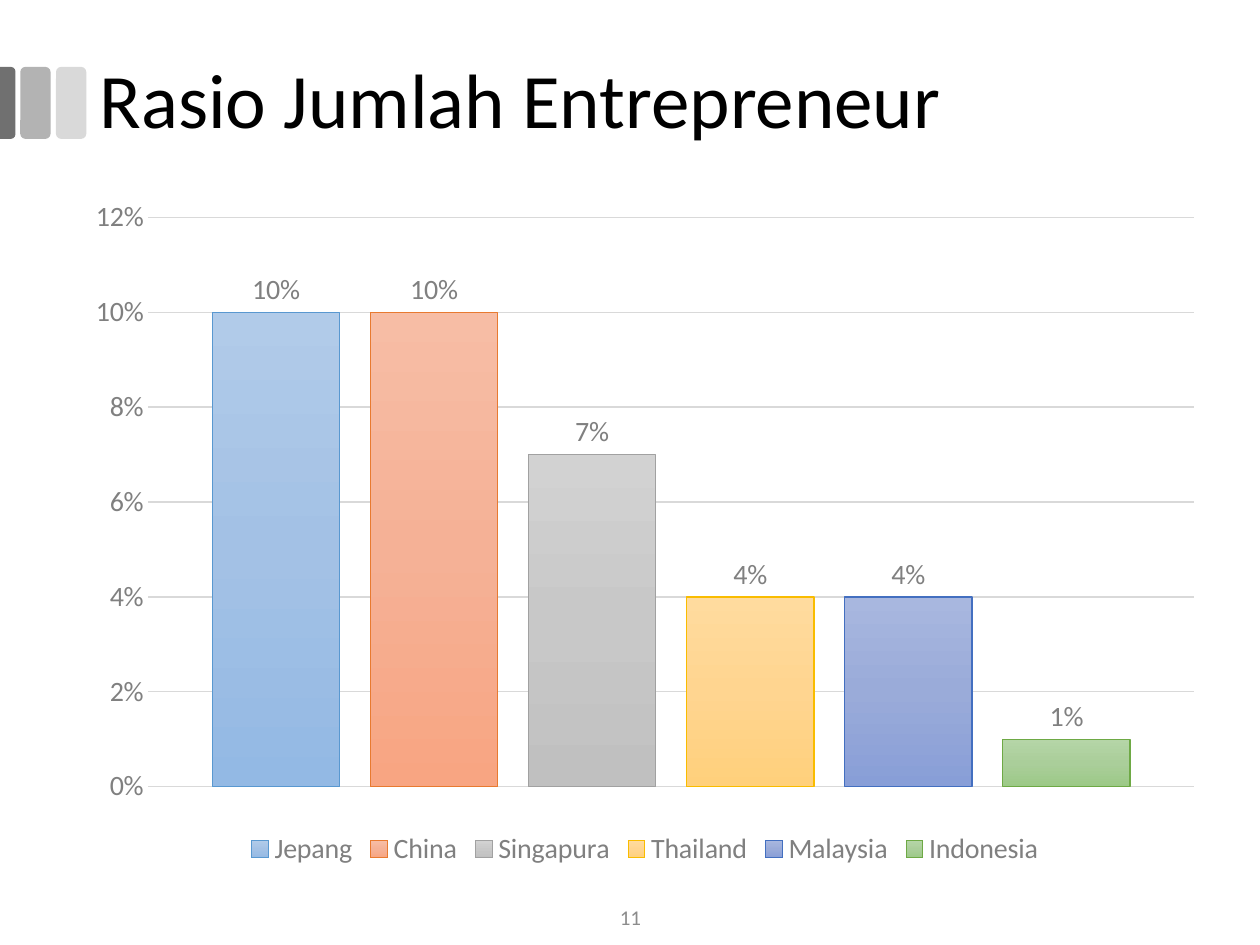
from dataclasses import dataclass

import pptx
import pptx.chart.data
import pptx.dml.color
import pptx.enum.chart
import pptx.enum.shapes
import pptx.enum.text
import pptx.oxml
import pptx.oxml.ns
import pptx.util
from pptx.util import Cm, Pt


@dataclass(frozen=True)
class Theme:
    font: str = "Calibri"
    title_color: str = "000000"
    chart_color: str = "808080"
    number_color: str = "8C8C8C"
    grid_color: str = "D9D9D9"
    tile_colors: tuple = ("D9D9D9", "B3B3B3", "707070")
    title_size: int = 44
    chart_size: int = 16
    number_size: int = 12
    thin_line: float = 0.75


THEME = Theme()

# country, share, gradient from top to bottom, outline
COUNTRIES = [
    ("Jepang", 0.10, ("B1CBE9", "A3C1E5", "93B9E4"), "5998D0"),
    ("China", 0.10, ("F7BDA5", "F5B196", "F8A582"), "E87A30"),
    ("Singapura", 0.07, ("D2D2D2", "C8C8C8", "C0C0C0"), "A1A1A1"),
    ("Thailand", 0.04, ("FFDB9E", "FFD590", "FFD07C"), "F9BC00"),
    ("Malaysia", 0.04, ("A8B7DF", "9AABD9", "889ED7"), "436FC0"),
    ("Indonesia", 0.01, ("B5D5A7", "AACE9A", "9CC987"), "6EA945"),
]


def rgb(color):
    return pptx.dml.color.RGBColor.from_string(color)


def style_font(font, size, color):
    font.name = THEME.font
    font.size = Pt(size)
    font.color.rgb = rgb(color)


def style_line(line, color):
    line.color.rgb = rgb(color)
    line.width = Pt(THEME.thin_line)


def write_text(frame, text, *, size, color, align, line_spacing=None):
    frame.word_wrap = True
    frame.vertical_anchor = pptx.enum.text.MSO_ANCHOR.MIDDLE
    paragraph = frame.paragraphs[0]
    paragraph.alignment = align
    paragraph.line_spacing = line_spacing
    run = paragraph.add_run()
    run.text = text
    style_font(run.font, size, color)


def add_tile(slide, kind, left, top, width, height, color):
    tile = slide.shapes.add_shape(kind, Cm(left), Cm(top), Cm(width), Cm(height))
    tile.shadow.inherit = False
    tile.fill.solid()
    tile.fill.fore_color.rgb = rgb(color)
    tile.line.fill.background()
    return tile


def add_title_tiles(slide):
    """Two whole tiles, and one cut off by the left edge of the slide."""
    kinds = pptx.enum.shapes.MSO_SHAPE
    light, middle, dark = THEME.tile_colors
    top, width, height = 1.35, 0.61, 1.45
    for left, color in ((1.13, light), (0.41, middle)):
        add_tile(slide, kinds.ROUNDED_RECTANGLE, left, top, width, height, color)

    cut_width = 0.31
    turn = (height - cut_width) / 2
    cut_tile = add_tile(slide, kinds.ROUND_2_SAME_RECTANGLE,
                        -turn, top + turn, height, cut_width, dark)
    cut_tile.rotation = 90
    cut_tile.adjustments[0] = 0.29
    cut_tile.adjustments[1] = 0


def add_title(slide, text):
    title = slide.shapes.title
    title.left, title.top = Cm(1.75), Cm(0.43)
    title.width, title.height = Cm(21.9), Cm(3.33)
    write_text(title.text_frame, text, size=THEME.title_size, color=THEME.title_color,
               align=pptx.enum.text.PP_ALIGN.LEFT, line_spacing=0.9)


def add_slide_number(slide, number):
    box = slide.shapes.add_textbox(Cm(9.85), Cm(17.98), Cm(5.72), Cm(1.02))
    write_text(box.text_frame, number, size=THEME.number_size, color=THEME.number_color,
               align=pptx.enum.text.PP_ALIGN.CENTER)


def fill_gradient(series, colors):
    """Fill the columns from top to bottom with evenly spaced stops."""
    step = 100000 // (len(colors) - 1)
    stops = "".join(
        f'<a:gs pos="{index * step}"><a:srgbClr val="{color}"/></a:gs>'
        for index, color in enumerate(colors))
    gradient = pptx.oxml.parse_xml(
        f'<a:gradFill {pptx.oxml.ns.nsdecls("a")} rotWithShape="1">'
        f'<a:gsLst>{stops}</a:gsLst><a:lin ang="5400000" scaled="0"/></a:gradFill>')
    series._element.get_or_add_spPr().insert(0, gradient)


def style_series(series, gradient, outline):
    fill_gradient(series, gradient)
    style_line(series.format.line, outline)
    series.invert_if_negative = False
    labels = series.data_labels
    labels.show_value = True
    labels.position = pptx.enum.chart.XL_LABEL_POSITION.OUTSIDE_END
    labels.number_format = "0%"
    labels.number_format_is_linked = False
    style_font(labels.font, THEME.chart_size, THEME.chart_color)


def style_share_axis(axis):
    axis.minimum_scale, axis.maximum_scale, axis.major_unit = 0, 0.12, 0.02
    axis.major_tick_mark = pptx.enum.chart.XL_TICK_MARK.NONE
    axis.minor_tick_mark = pptx.enum.chart.XL_TICK_MARK.NONE
    axis.format.line.fill.background()
    axis.has_major_gridlines = True
    style_line(axis.major_gridlines.format.line, THEME.grid_color)
    axis.tick_labels.number_format = "0%"
    axis.tick_labels.number_format_is_linked = False
    style_font(axis.tick_labels.font, THEME.chart_size, THEME.chart_color)


def add_ratio_chart(slide):
    shares = pptx.chart.data.CategoryChartData(number_format="0%")
    shares.categories = ["1"]
    for country, share, _, _ in COUNTRIES:
        shares.add_series(country, [share])
    chart = slide.shapes.add_chart(
        pptx.enum.chart.XL_CHART_TYPE.COLUMN_CLUSTERED,
        Cm(1.47), Cm(3.76), Cm(23.06), Cm(13.82), shares).chart
    style_font(chart.font, THEME.chart_size, THEME.title_color)
    chart.has_title = False
    chart.category_axis.visible = False
    style_share_axis(chart.value_axis)

    chart.has_legend = True
    chart.legend.position = pptx.enum.chart.XL_LEGEND_POSITION.BOTTOM
    chart.legend.include_in_layout = False
    style_font(chart.legend.font, THEME.chart_size, THEME.chart_color)

    columns = chart.plots[0]
    columns.gap_width = 100
    columns.overlap = -24
    columns.vary_by_categories = False
    for series, (_, _, gradient, outline) in zip(columns.series, COUNTRIES):
        style_series(series, gradient, outline)


def main():
    presentation = pptx.Presentation()
    presentation.slide_width, presentation.slide_height = Cm(25.4), Cm(19.05)
    title_only = presentation.slide_layouts[5]
    slide = presentation.slides.add_slide(title_only)
    add_title_tiles(slide)
    add_title(slide, "Rasio Jumlah Entrepreneur")
    add_slide_number(slide, "11")
    add_ratio_chart(slide)
    presentation.save("out.pptx")


if __name__ == "__main__":
    main()
